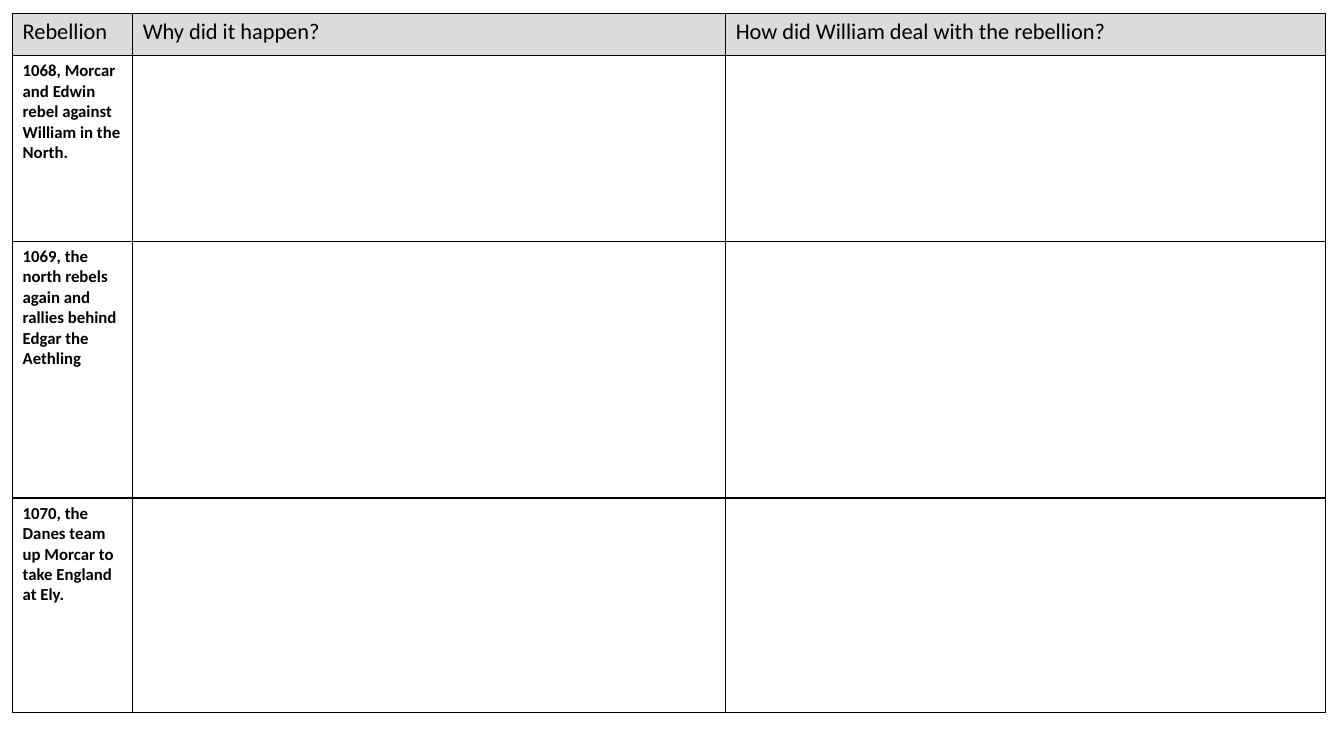
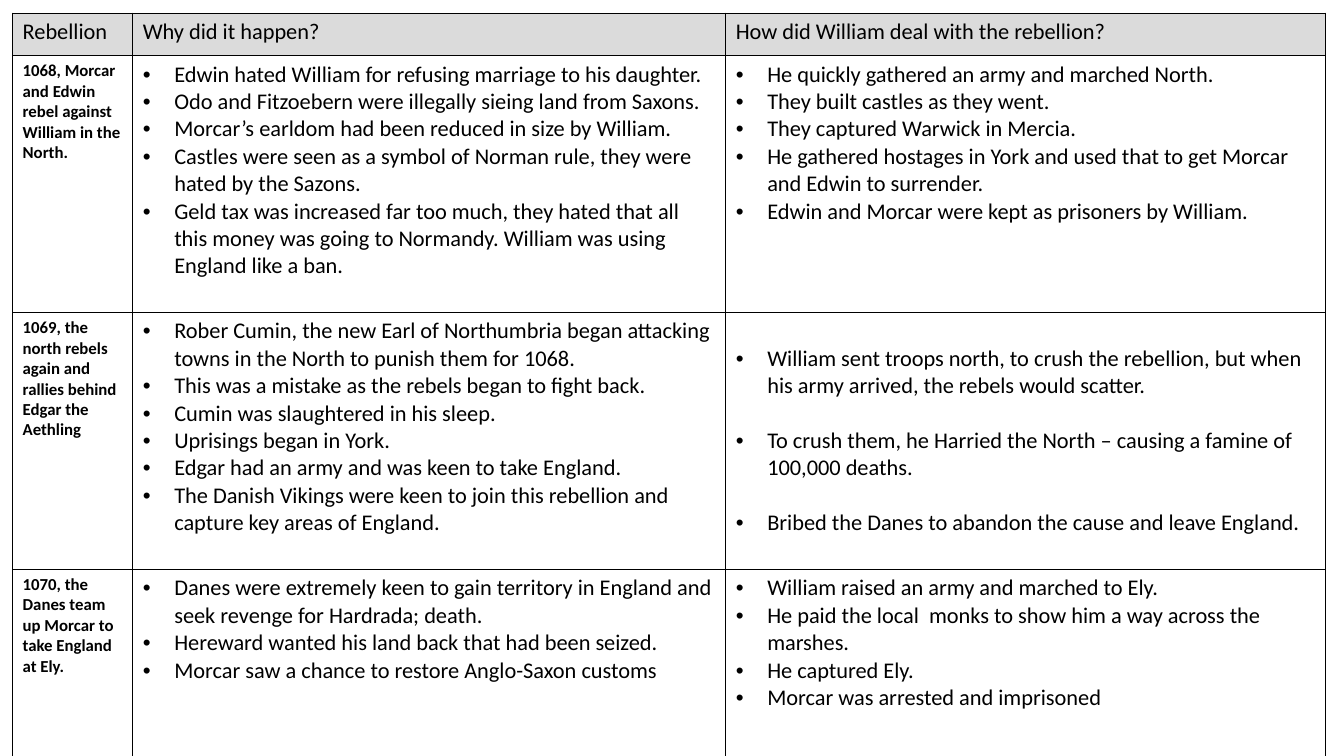
import pptx
import pptx.util
import pptx.dml.color
import pptx.oxml
import pptx.oxml.ns

Pt = pptx.util.Pt
FONT = "Calibri"
BLACK, WHITE, GREY = "000000", "FFFFFF", "DBDBDB"
LINE = 19.5
HEADS = ["Rebellion", "Why did it happen?", "How did William deal with the rebellion?"]
REBELLIONS = [
    "1068, Morcar and Edwin rebel against William in the North.",
    "1069, the north rebels again and rallies behind Edgar the Aethling",
    "1070, the Danes team up Morcar to take England at Ely.",
]
ANSWERS = [
    (
        [
            "Edwin hated William for refusing marriage to his daughter.",
            "Odo and Fitzoebern were illegally sieing land from Saxons.",
            "Morcar’s earldom had been reduced in size by William.",
            "Castles were seen as a symbol of Norman rule, they were hated by the Sazons.",
            "Geld tax was increased far too much, they hated that all this money was going "
            "to Normandy. William was using England like a ban.",
        ],
        [
            "He quickly gathered an army and marched North.",
            "They built castles as they went.",
            "They captured Warwick in Mercia.",
            "He gathered hostages in York and used that to get Morcar and Edwin to surrender.",
            "Edwin and Morcar were kept as prisoners by William.",
        ],
    ),
    (
        [
            "Rober Cumin, the new Earl of Northumbria began attacking towns in the North "
            "to punish them for 1068.",
            "This was a mistake as the rebels began to fight back.",
            "Cumin was slaughtered in his sleep.",
            "Uprisings began in York.",
            "Edgar had an army and was keen to take England.",
            "The Danish Vikings were keen to join this rebellion and capture key areas of England.",
        ],
        [
            "William sent troops north, to crush the rebellion, but when his army arrived, "
            "the rebels would scatter.",
            "To crush them, he Harried the North – causing a famine of 100,000 deaths.",
            "Bribed the Danes to abandon the cause and leave England.",
        ],
    ),
    (
        [
            "Danes were extremely keen to gain territory in England and seek revenge "
            "for Hardrada; death.",
            "Hereward wanted his land back that had been seized.",
            "Morcar saw a chance to restore Anglo-Saxon customs",
        ],
        [
            "William raised an army and marched to Ely.",
            "He paid the local  monks to show him a way across the marshes.",
            "He captured Ely.",
            "Morcar was arrested and imprisoned",
        ],
    ),
]


def rgb(color):
    return pptx.dml.color.RGBColor.from_string(color)


def style_cell(cell, fill):
    cell.fill.solid()
    cell.fill.fore_color.rgb = rgb(fill)
    tcPr = cell._tc.get_or_add_tcPr()
    for i, side in enumerate(("lnL", "lnR", "lnT", "lnB")):
        tcPr.insert(i, pptx.oxml.parse_xml(
            f'<a:{side} {pptx.oxml.ns.nsdecls("a")} w="{Pt(1)}"><a:solidFill>'
            f'<a:srgbClr val="{BLACK}"/></a:solidFill></a:{side}>'))


def add_bullet(p):
    pPr = p._p.get_or_add_pPr()
    pPr.set("marL", str(Pt(22.5)))
    pPr.set("indent", str(-Pt(22.5)))
    for tag, attr in (("buFont", 'typeface="Arial"'), ("buChar", 'char="•"')):
        pPr.append(pptx.oxml.parse_xml(f'<a:{tag} {pptx.oxml.ns.nsdecls("a")} {attr}/>'))


def write_cell(cell, lines, size, bold=False, bullets=False, gap=0):
    tf = cell.text_frame
    tf.text = "\n".join(lines)
    for i, p in enumerate(tf.paragraphs):
        if gap and i:
            p.space_before = Pt(gap)
        if bullets:
            add_bullet(p)
        for r in p.runs:
            r.font.name, r.font.size, r.font.bold = FONT, Pt(size), bold
            r.font.color.rgb = rgb(BLACK)


def add_rebellion_table(s, left, top, widths, heights):
    frame = s.shapes.add_table(len(heights), len(widths), Pt(left), Pt(top),
                               Pt(sum(widths)), Pt(sum(heights)))
    table = frame.table
    table.first_row = table.horz_banding = False
    for column, width in zip(table.columns, widths):
        column.width = Pt(width)
    for i, (row, height) in enumerate(zip(table.rows, heights)):
        row.height = Pt(height)
        for cell in row.cells:
            style_cell(cell, WHITE if i else GREY)
    for cell, head in zip(table.rows[0].cells, HEADS):
        write_cell(cell, [head], 16)
    for i, rebellion in enumerate(REBELLIONS, 1):
        write_cell(table.cell(i, 0), [rebellion], 12, bold=True)
    return table


def fill_answers(table):
    spaced = table.cell(2, 2)
    spaced.margin_top = Pt(3.6 + LINE)
    for i, answers in enumerate(ANSWERS, 1):
        for j, lines in enumerate(answers, 1):
            gap = LINE if (i, j) == (2, 2) else 0
            write_cell(table.cell(i, j), lines, 16, bullets=True, gap=gap)


def add_table_slide(prs, first_height, answered):
    s = prs.slides.add_slide(prs.slide_layouts[6])
    table = add_rebellion_table(s, 9, 9.4, [85.8, 423.6, 428.2],
                                [30.4, first_height, 183.5, 153.4])
    if answered:
        fill_answers(table)


def main():
    prs = pptx.Presentation()
    prs.slide_width, prs.slide_height = Pt(960), Pt(540)
    add_table_slide(prs, 132.5, False)
    add_table_slide(prs, 183.5, True)
    prs.save("out.pptx")


if __name__ == "__main__":
    main()
